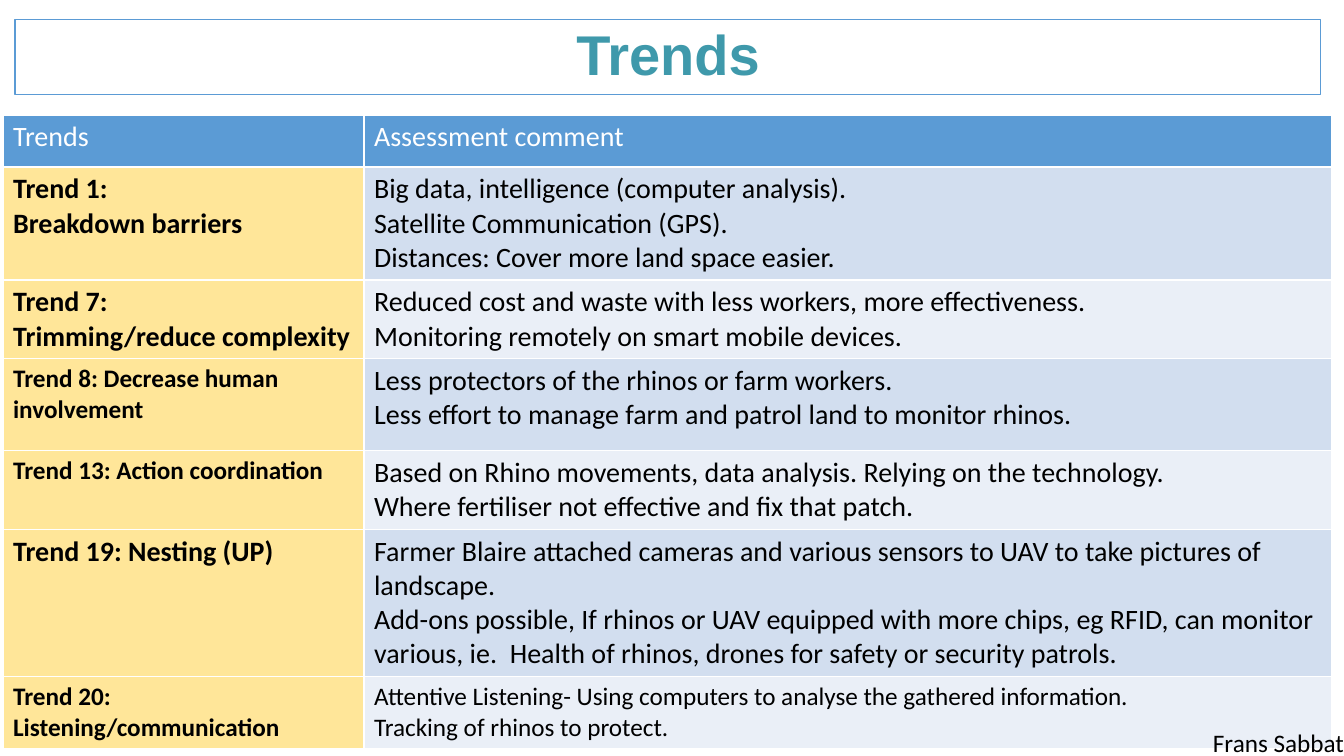
"""Build a slide with a titled table of trends and assessment comments."""
from lxml.etree import SubElement
from pptx import Presentation
from pptx.dml.color import RGBColor
from pptx.enum.shapes import MSO_SHAPE
from pptx.enum.text import MSO_ANCHOR, PP_ALIGN
from pptx.oxml.ns import qn
from pptx.util import Emu, Pt

TITLE = "Trends"
AUTHOR = "Frans Sabbat"
HEADER = ("Trends", "Assessment comment")
TRENDS = [
    (111, 20, ["Trend 1:", "Breakdown barriers"], 20,
     ["Big data, intelligence (computer analysis).",
      "Satellite Communication (GPS).",
      "Distances: Cover more land space easier."]),
    (77, 20, ["Trend 7:", "Trimming/reduce complexity"], 20,
     ["Reduced cost and waste with less workers, more effectiveness.",
      "Monitoring remotely on smart mobile devices."]),
    (92, 18, ["Trend 8: Decrease human involvement"], 20,
     ["Less protectors of the rhinos or farm workers.",
      "Less effort to manage farm and patrol land to monitor rhinos."]),
    (78, 18, ["Trend 13: Action coordination"], 20,
     ["Based on Rhino movements, data analysis. Relying on the technology.",
      "Where fertiliser not effective and fix that patch."]),
    (144, 20, ["Trend 19: Nesting (UP)"], 20,
     ["Farmer Blaire attached cameras and various sensors to UAV to take "
      "pictures of landscape.",
      "Add-ons possible, If rhinos or UAV equipped with more chips, eg RFID, "
      "can monitor various, ie.  Health of rhinos, drones for safety or "
      "security patrols."]),
    (72, 18, ["Trend 20: Listening/communication"], 18,
     ["Attentive Listening- Using computers to analyse the gathered information.",
      "Tracking of rhinos to protect."]),
]
COLUMN_WIDTHS = (361, 968)
HEADER_HEIGHT = 52
BLUE, YELLOW, WHITE, BLACK, TEAL = "5B9BD5", "FFE699", "FFFFFF", "000000", "3F99AB"
BANDS = ("D2DEEF", "EAEFF7")


def px(length):
    return Emu(round(length * 914400 / 100.8))


def color(value):
    return RGBColor.from_string(value)


def write(frame, lines, hue, **font):
    font = {"name": "Calibri", "bold": False, **font}
    for index, line in enumerate(lines):
        para = frame.paragraphs[0] if index == 0 else frame.add_paragraph()
        span = para.add_run()
        span.text = line
        span.font.color.rgb = color(hue)
        for key, value in font.items():
            setattr(span.font, key, value)


def add_borders(cell):
    properties = cell._tc.get_or_add_tcPr()
    for position, side in enumerate(("lnL", "lnR", "lnT", "lnB")):
        line = properties.makeelement(qn(f"a:{side}"), {"w": str(Pt(1))})
        fill = SubElement(line, qn("a:solidFill"))
        SubElement(fill, qn("a:srgbClr"), val=WHITE)
        properties.insert(position, line)


def fill_cell(cell, lines, fill, hue, **font):
    cell.fill.solid()
    cell.fill.fore_color.rgb = color(fill)
    add_borders(cell)
    write(cell.text_frame, lines, hue, **font)


def add_title(page):
    box = page.shapes.add_shape(
        MSO_SHAPE.RECTANGLE, px(15), px(20), px(1306), px(75))
    box.shadow.inherit = False
    box.fill.background()
    box.line.color.rgb = color(BLUE)
    box.line.width = Pt(0.75)
    box.text_frame.vertical_anchor = MSO_ANCHOR.MIDDLE
    write(box.text_frame, [TITLE], TEAL, name="Arial", size=Pt(40), bold=True)
    para = box.text_frame.paragraphs[0]
    para.alignment = PP_ALIGN.CENTER
    para.line_spacing = 0.9


def add_trends(page):
    heights = [HEADER_HEIGHT] + [trend[0] for trend in TRENDS]
    table = page.shapes.add_table(
        len(heights), len(COLUMN_WIDTHS), px(3), px(115),
        px(sum(COLUMN_WIDTHS)), px(sum(heights))).table
    for column, width in zip(table.columns, COLUMN_WIDTHS):
        column.width = px(width)
    for row, height in zip(table.rows, heights):
        row.height = px(height)
    for index, label in enumerate(HEADER):
        fill_cell(table.cell(0, index), [label], BLUE, WHITE, size=Pt(20))
    for index, (_, name_size, name, comment_size, comment) in enumerate(TRENDS):
        fill_cell(table.cell(index + 1, 0), name, YELLOW, BLACK,
                  size=Pt(name_size), bold=True)
        fill_cell(table.cell(index + 1, 1), comment, BANDS[index % 2], BLACK,
                  size=Pt(comment_size))


def add_author(page):
    box = page.shapes.add_textbox(px(1203), px(722), px(141), px(40))
    box.text_frame.word_wrap = False
    box.text_frame.margin_right = 0
    write(box.text_frame, [AUTHOR], BLACK, size=Pt(18))


def main():
    deck = Presentation()
    deck.slide_width, deck.slide_height = px(1344), px(756)
    page = deck.slides.add_slide(deck.slide_layouts[6])
    add_title(page)
    add_trends(page)
    add_author(page)
    deck.save("out.pptx")


if __name__ == "__main__":
    main()
